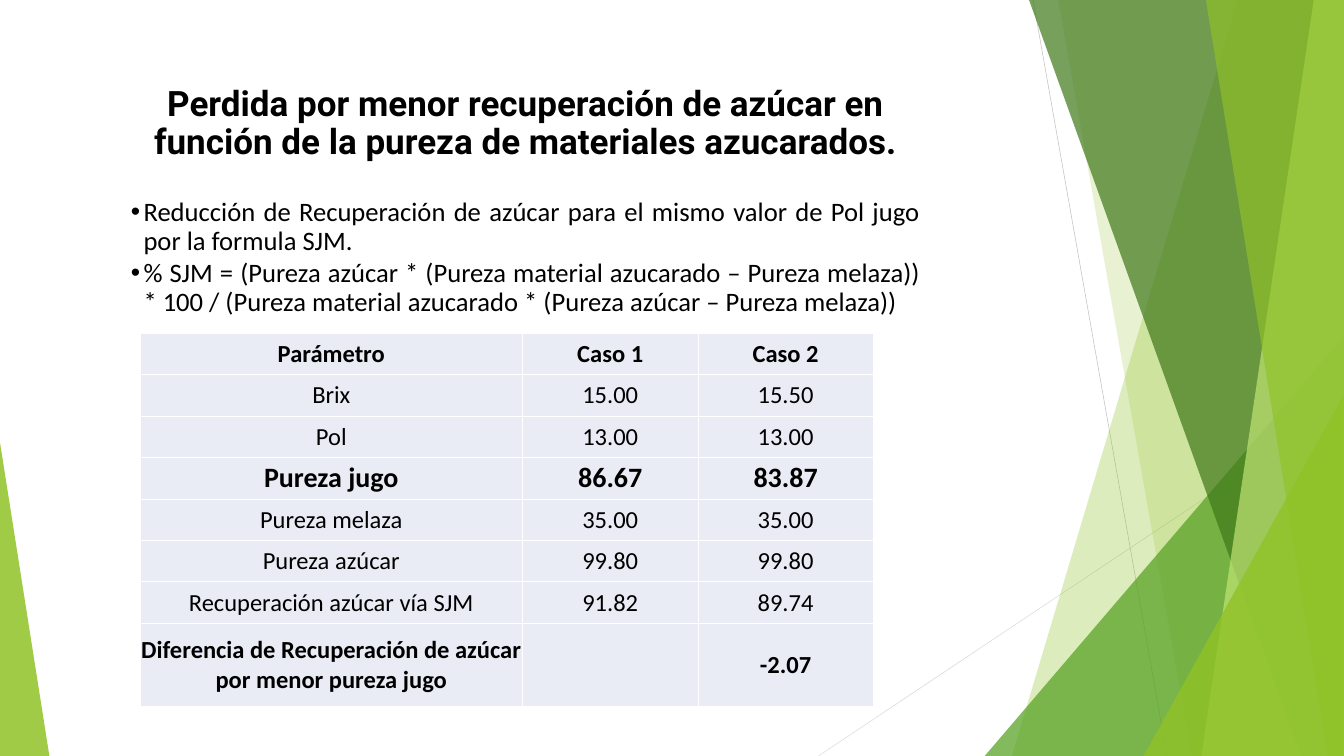
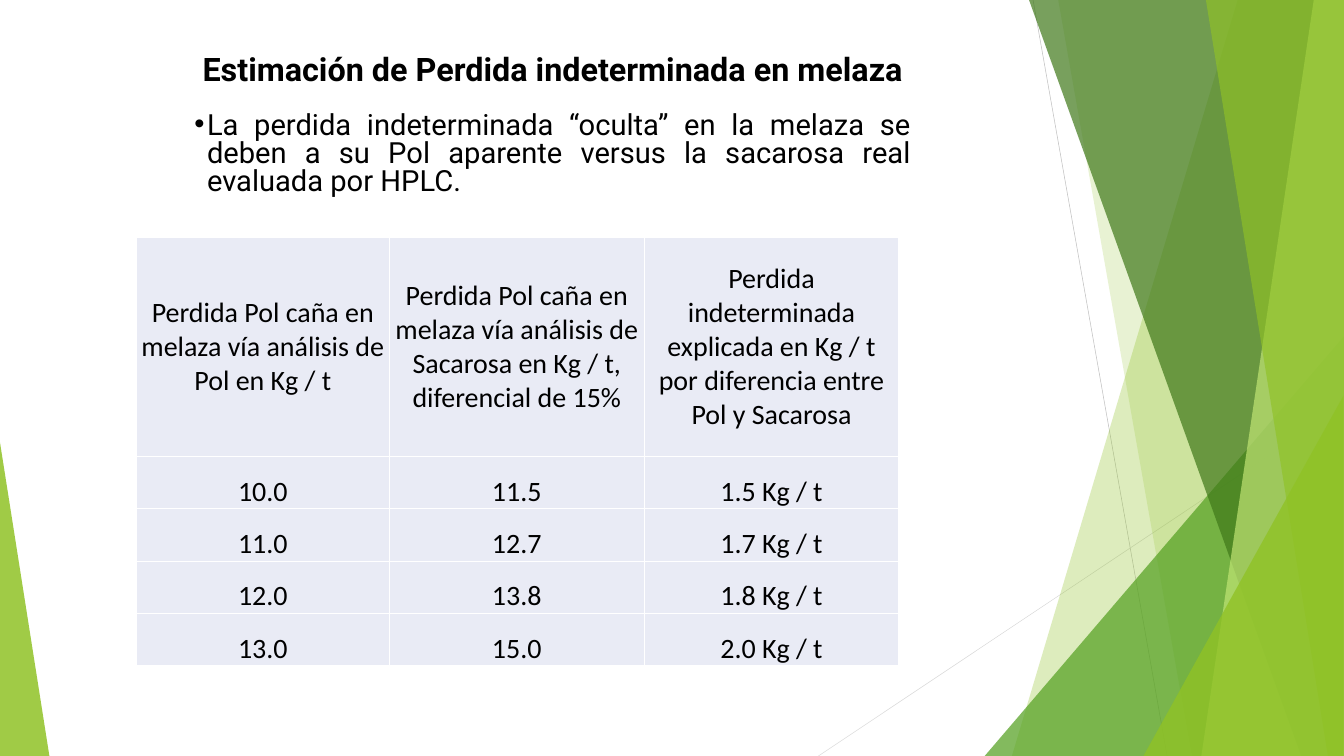
from lxml import etree
from pptx import Presentation
from pptx import util as u
from pptx.dml.color import RGBColor
from pptx.enum import shapes, text
from pptx.oxml.ns import qn

WIDTH, HEIGHT = 26.67, 15
BLACK, WHITE = "000000", "FFFFFF"
LIME, GREEN, FOREST, PALE = "90C226", "54A021", "3F7819", "C0E474"
CELL_FILL = "E9EBF5"
TITLE_FONT, BODY_FONT = "Roboto", "Calibri"


def color(value):
    return RGBColor.from_string(value)


def paint(shape, fill, opacity):
    shape.shadow.inherit = False
    shape.fill.solid()
    shape.fill.fore_color.rgb = color(fill)
    shape.line.fill.background()
    tint = next(shape._element.iter(qn("a:srgbClr")))
    etree.SubElement(tint, qn("a:alpha"), val=str(opacity * 1000))


def add_line(slide, start, end, stroke):
    points = [u.Inches(value) for value in (*start, *end)]
    line = slide.shapes.add_connector(shapes.MSO_CONNECTOR.STRAIGHT, *points)
    line.line.color.rgb = color(stroke)
    line.line.width = u.Pt(0.75)
    etree.SubElement(line._element.spPr, qn("a:effectLst"))


def add_band(slide, top_left, bottom_left, bottom_right, fill, opacity):
    outline = [(WIDTH, 0), (WIDTH, HEIGHT), (bottom_right, HEIGHT), (bottom_left, HEIGHT)]
    builder = slide.shapes.build_freeform(u.Inches(top_left), 0)
    builder.add_line_segments([(u.Inches(x), u.Inches(y)) for x, y in outline])
    paint(builder.convert_to_shape(), fill, opacity)


def add_triangle(slide, left, top, width, apex, fill, opacity):
    box = [u.Inches(value) for value in (left, top, width, HEIGHT - top)]
    triangle = slide.shapes.add_shape(shapes.MSO_SHAPE.ISOSCELES_TRIANGLE, *box)
    triangle.adjustments[0] = apex
    paint(triangle, fill, opacity)


def add_backdrop(slide):
    add_line(slide, (20.5, 0), (23.16, HEIGHT), "BFBFBF")
    add_line(slide, (26.66, 8.05), (16.24, HEIGHT), "D9D9D9")
    add_band(slide, 24.56, 20.08, WIDTH, LIME, 30)
    add_band(slide, 21, 23.65, WIDTH, LIME, 20)
    add_triangle(slide, 19.54, 6.67, 7.13, 1, GREEN, 72)
    add_band(slide, 20.42, 25.82, WIDTH, FOREST, 70)
    add_band(slide, 26.07, 23.84, WIDTH, PALE, 70)
    add_band(slide, 23.93, 26.35, WIDTH, LIME, 65)
    add_triangle(slide, 22.69, 7.85, 3.97, 1, LIME, 80)
    add_triangle(slide, 0, 8.78, 0.98, 0, LIME, 85)


def set_font(paragraph, name, size, bold=False):
    paragraph.font.name = name
    paragraph.font.size = u.Pt(size)
    paragraph.font.bold = bold
    paragraph.font.color.rgb = color(BLACK)


def set_indent(paragraph, margin, indent, bullet=None):
    properties = paragraph._p.get_or_add_pPr()
    properties.set("marL", str(u.Inches(margin)))
    properties.set("indent", str(u.Inches(indent)))
    if bullet:
        etree.SubElement(properties, qn("a:buFont"), typeface="Arial")
        etree.SubElement(properties, qn("a:buChar"), char=bullet)


def add_heading(slide, box, top_inset, title, title_size, bullets, bullet_font,
                bullet_size, bullet_gap, spacing):
    frame = slide.shapes.add_textbox(*[u.Inches(value) for value in box]).text_frame
    frame.word_wrap = True
    frame.margin_top = u.Inches(top_inset)
    for index, words in enumerate([title, *bullets]):
        paragraph = frame.add_paragraph() if index else frame.paragraphs[0]
        paragraph.text = words
        if index:
            set_indent(paragraph, 0.75, -0.25, "•")
            set_font(paragraph, bullet_font, bullet_size)
            paragraph.alignment = text.PP_ALIGN.JUSTIFY
        else:
            set_indent(paragraph, 0.5, 0)
            set_font(paragraph, TITLE_FONT, title_size, bold=True)
            paragraph.alignment = text.PP_ALIGN.CENTER
        paragraph.line_spacing = spacing
        paragraph.space_before = u.Pt(bullet_gap if index == 1 else 5)


def style_cell(cell, anchor):
    properties = cell._tc.get_or_add_tcPr()
    for side in ("a:lnL", "a:lnR", "a:lnT", "a:lnB"):
        border = etree.SubElement(properties, qn(side), w=str(u.Pt(1)))
        solid = etree.SubElement(border, qn("a:solidFill"))
        etree.SubElement(solid, qn("a:srgbClr"), val=WHITE)
    cell.fill.solid()
    cell.fill.fore_color.rgb = color(CELL_FILL)
    cell.margin_left = cell.margin_right = cell.margin_top = u.Inches(0.01)
    cell.margin_bottom = 0
    cell.vertical_anchor = anchor


def add_grid(slide, left, top, widths, heights, rows, row_styles, body_anchor):
    box = [u.Inches(value) for value in (left, top, sum(widths), sum(heights))]
    table = slide.shapes.add_table(len(rows), len(widths), *box).table
    table.first_row = table.horz_banding = False
    for column, width in zip(table.columns, widths):
        column.width = u.Inches(width)
    for index, values in enumerate(rows):
        table.rows[index].height = u.Inches(heights[index])
        size, bold = row_styles[index]
        for cell, value in zip(table.rows[index].cells, values):
            style_cell(cell, body_anchor if index else text.MSO_ANCHOR.MIDDLE)
            paragraph = cell.text_frame.paragraphs[0]
            paragraph.text = value
            paragraph.alignment = text.PP_ALIGN.CENTER
            set_font(paragraph, BODY_FONT, size, bold)


def build_recovery_slide(slide):
    add_heading(
        slide, (2, 0.93, 16.36, 13.09), 0.79,
        "Perdida por menor recuperación de azúcar en función de la pureza "
        "de materiales azucarados.", 50,
        ["Reducción de Recuperación de azúcar para el mismo valor de Pol jugo "
         "por la formula SJM.",
         "% SJM = (Pureza azúcar * (Pureza material azucarado – Pureza melaza)) "
         "* 100 / (Pureza material azucarado * (Pureza azúcar – Pureza melaza))"],
        BODY_FONT, 38, 52, 0.9)
    rows = [
        ("Parámetro", "Caso 1", "Caso 2"),
        ("Brix", "15.00", "15.50"),
        ("Pol", "13.00", "13.00"),
        ("Pureza jugo", "86.67", "83.87"),
        ("Pureza melaza", "35.00", "35.00"),
        ("Pureza azúcar", "99.80", "99.80"),
        ("Recuperación azúcar vía SJM", "91.82", "89.74"),
        ("Diferencia de Recuperación de azúcar por menor pureza jugo", "", "-2.07"),
    ]
    plain, strong, highlight = (35, False), (35, True), (40, True)
    styles = [strong, plain, plain, highlight, plain, plain, plain, strong]
    unit = 7.4 / 9
    add_grid(slide, 2.78, 6.61, [7.59, 3.48, 3.48], [unit] * 7 + [2 * unit],
             rows, styles, text.MSO_ANCHOR.MIDDLE)


def build_molasses_slide(slide):
    add_heading(
        slide, (3.26, 1.1, 14.92, 3.61), 0.02,
        "Estimación de Perdida indeterminada en melaza", 46.2,
        ["La perdida indeterminada “oculta” en la melaza se deben a su Pol "
         "aparente versus la sacarosa real evaluada por HPLC."],
        TITLE_FONT, 41.6, 36, 0.8)
    rows = [
        ("Perdida Pol caña en melaza vía análisis de Pol en Kg / t",
         "Perdida Pol caña en melaza vía análisis de Sacarosa en Kg / t, "
         "diferencial de 15%",
         "Perdida indeterminada explicada en Kg / t por diferencia entre "
         "Pol y Sacarosa"),
        ("10.0", "11.5", "1.5 Kg / t"),
        ("11.0", "12.7", "1.7 Kg / t"),
        ("12.0", "13.8", "1.8 Kg / t"),
        ("13.0", "15.0", "2.0 Kg / t"),
    ]
    add_grid(slide, 2.71, 4.71, [5.01, 5.07, 5.04], [4.34] + [1.04] * 4,
             rows, [(40, False)] * len(rows), text.MSO_ANCHOR.BOTTOM)


def main():
    presentation = Presentation()
    presentation.slide_width = u.Inches(WIDTH)
    presentation.slide_height = u.Inches(HEIGHT)
    for build in (build_recovery_slide, build_molasses_slide):
        slide = presentation.slides.add_slide(presentation.slide_layouts[6])
        add_backdrop(slide)
        build(slide)
    presentation.save("out.pptx")


if __name__ == "__main__":
    main()
